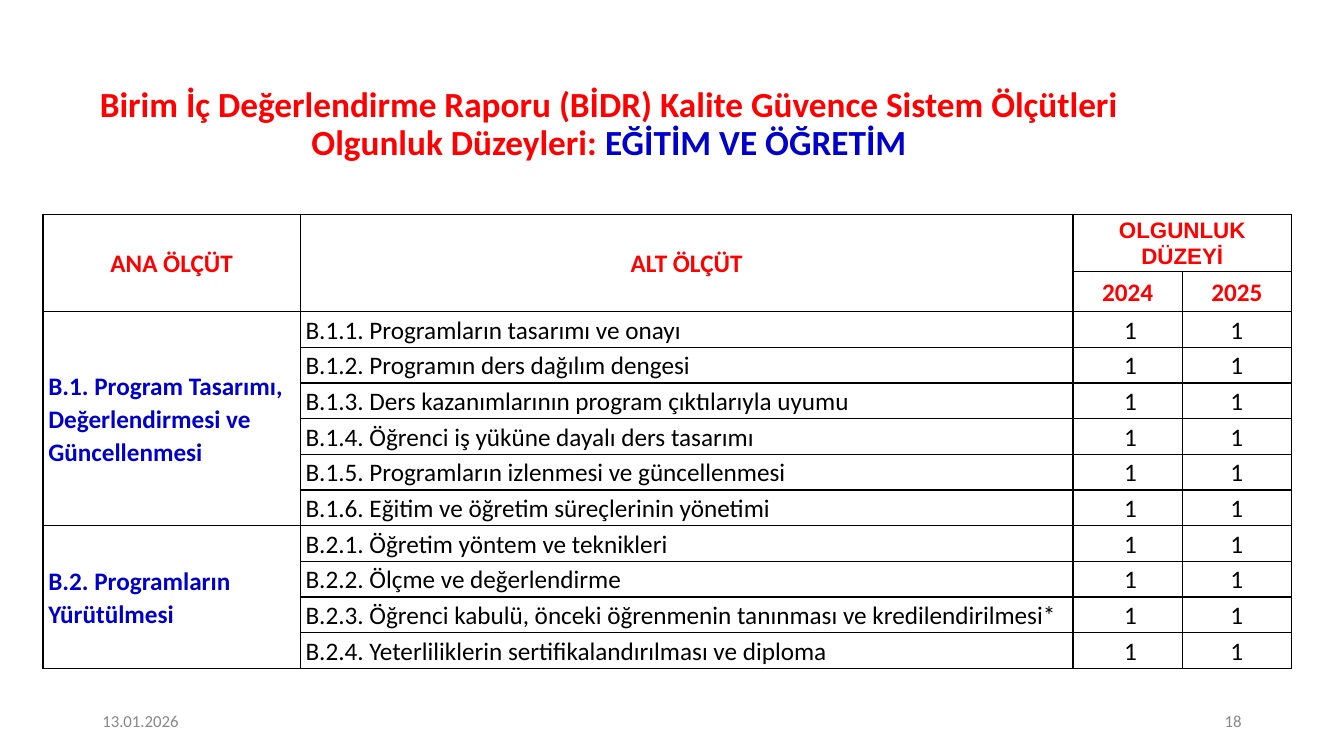
import pptx
import pptx.dml.color
import pptx.enum.text
import pptx.oxml
import pptx.oxml.ns
import pptx.util

PX = 9525
RED, BLUE, BLACK, GRAY = "FF0000", "0000CC", "000000", "888888"
ALIGN = pptx.enum.text.PP_ALIGN
MIDDLE = pptx.enum.text.MSO_ANCHOR.MIDDLE


def format_span(span, size, color, bold=False, font="Calibri"):
    span.font.size = pptx.util.Pt(size)
    span.font.name = font
    span.font.bold = bold
    span.font.color.rgb = pptx.dml.color.RGBColor.from_string(color)


def add_text(left, top, width, height, spans, size, align, bold=False):
    box = page.shapes.add_textbox(left * PX, top * PX, width * PX, height * PX)
    box.text_frame.word_wrap = True
    box.text_frame.vertical_anchor = MIDDLE
    para = box.text_frame.paragraphs[0]
    para.alignment = align
    for text, color in spans:
        span = para.add_run()
        span.text = text
        format_span(span, size, color, bold)
    return para


deck = pptx.Presentation()
deck.slide_width, deck.slide_height = 1280 * PX, 720 * PX
page = deck.slides.add_slide(deck.slide_layouts[6])

# Title
title = add_text(41, 86, 1078, 67, [
    ("Birim İç Değerlendirme Raporu (BİDR) Kalite Güvence Sistem Ölçütleri Olgunluk Düzeyleri: ", RED),
    ("EĞİTİM VE ÖĞRETİM", BLUE),
], 25.2, ALIGN.CENTER, True)
title.line_spacing = 0.9

# Date and page number
add_text(88, 667, 288, 38, [("13.01.2026", GRAY)], 12, ALIGN.LEFT)
add_text(904, 667, 288, 38, [("18", GRAY)], 12, ALIGN.RIGHT)

# Table contents: main criteria with their sub-criteria
criteria = {
    "B.1. Program Tasarımı, Değerlendirmesi ve Güncellenmesi": [
        "B.1.1. Programların tasarımı ve onayı",
        "B.1.2. Programın ders dağılım dengesi",
        "B.1.3. Ders kazanımlarının program çıktılarıyla uyumu",
        "B.1.4. Öğrenci iş yüküne dayalı ders tasarımı",
        "B.1.5. Programların izlenmesi ve güncellenmesi",
        "B.1.6. Eğitim ve öğretim süreçlerinin yönetimi",
    ],
    "B.2. Programların Yürütülmesi": [
        "B.2.1. Öğretim yöntem ve teknikleri",
        "B.2.2. Ölçme ve değerlendirme",
        "B.2.3. Öğrenci kabulü, önceki öğrenmenin tanınması ve kredilendirilmesi*",
        "B.2.4. Yeterliliklerin sertifikalandırılması ve diploma",
    ],
}
rows = [["ANA ÖLÇÜT", "ALT ÖLÇÜT", "OLGUNLUK DÜZEYİ", ""], ["", "", "2024", "2025"]]
merges = [(0, 0, 1, 0), (0, 1, 1, 1), (0, 2, 0, 3)]
for main, subs in criteria.items():
    merges.append((len(rows), 0, len(rows) + len(subs) - 1, 0))
    for index, sub in enumerate(subs):
        rows.append([main if index == 0 else "", sub, " 1", "1"])

# Table grid
widths = [245, 736, 104, 104]
heights = [38, 38] + [34] * (len(rows) - 2)
table = page.shapes.add_table(len(rows), len(widths), 41 * PX, 204 * PX,
                              sum(widths) * PX, sum(heights) * PX).table
table.first_row = table.horz_banding = False
for column, width in zip(table.columns, widths):
    column.width = width * PX
for row, height in zip(table.rows, heights):
    row.height = height * PX

# Cells
for r, texts in enumerate(rows):
    for c, text in enumerate(texts):
        cell = table.cell(r, c)
        cell.margin_left = cell.margin_right = 5 * PX
        cell.margin_top = cell.margin_bottom = 0
        cell.vertical_anchor = MIDDLE
        for side in ("lnL", "lnR", "lnT", "lnB"):
            cell._tc.get_or_add_tcPr().append(pptx.oxml.parse_xml(
                f'<a:{side} {pptx.oxml.ns.nsdecls("a")} w="12700"><a:solidFill>'
                f'<a:srgbClr val="{BLACK}"/></a:solidFill></a:{side}>'))
        cell.fill.background()
        cell.text_frame.text = text
        para = cell.text_frame.paragraphs[0]
        para.line_spacing = 1.07
        header = r < 2
        if header or c > 1:
            para.alignment = ALIGN.CENTER
        else:
            para.alignment = ALIGN.JUSTIFY if c == 1 else ALIGN.LEFT
        color = RED if header else BLUE if c == 0 else BLACK
        size, font = (16, "Arial") if (r, c) == (0, 2) else (18, "Calibri")
        for span in para.runs:
            format_span(span, size, color, header or c == 0, font)

# Merged cells
for top, left, bottom, right in merges:
    table.cell(top, left).merge(table.cell(bottom, right))

deck.save("out.pptx")
